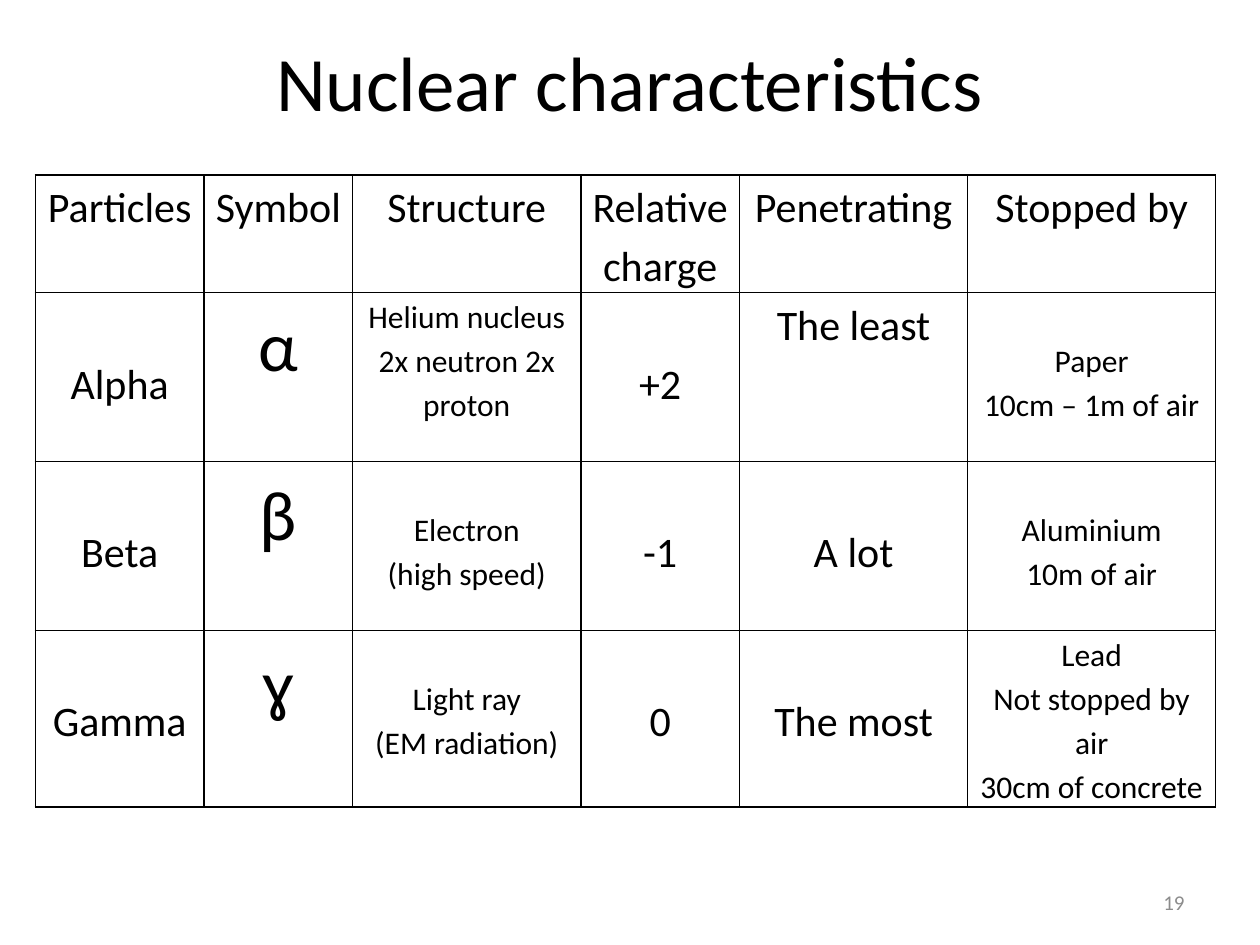
from dataclasses import dataclass

from lxml.etree import SubElement
from pptx import Presentation
from pptx.dml.color import RGBColor
from pptx.enum.text import MSO_ANCHOR as Anchor, PP_ALIGN as Align
from pptx.oxml.ns import qn
from pptx.slide import Slide
from pptx.table import _Cell as Cell
from pptx.text.text import TextFrame
from pptx.util import Inches, Pt

BLACK = RGBColor(0x00, 0x00, 0x00)
GRAY = RGBColor(0x8C, 0x8C, 0x8C)
FONT = "Calibri"
SLIDE_WIDTH, SLIDE_HEIGHT = Inches(10), Inches(7.5)
LINE_SPACING = 1.15
FONT_LINE_HEIGHT = 1.22
COLUMN_WIDTHS = (1.34, 1.18, 1.81, 1.26, 1.81, 1.97)
ROW_HEIGHTS = (0.93, 1.34, 1.34, 1.4)
SIDE_INSET = Inches(0.07)
LARGE, MEDIUM, SMALL = 40, 24, 18


@dataclass(frozen=True)
class Area:
    left: float
    top: float
    width: float
    height: float

    def lengths(self) -> tuple[int, int, int, int]:
        return (
            int(self.left * SLIDE_WIDTH),
            int(self.top * SLIDE_HEIGHT),
            int(self.width * SLIDE_WIDTH),
            int(self.height * SLIDE_HEIGHT),
        )


@dataclass(frozen=True)
class Label:
    text: str
    area: Area
    size: int
    color: RGBColor
    align: Align


@dataclass(frozen=True)
class Entry:
    text: str
    size: int = MEDIUM
    lines_above: int = 0


@dataclass(frozen=True)
class Particle:
    name: str
    symbol: str
    structure: Entry
    charge: str
    penetrating: Entry
    stopped_by: Entry

    def entries(self) -> tuple[Entry, ...]:
        return (
            Entry(self.name, lines_above=1),
            Entry(self.symbol, LARGE),
            self.structure,
            Entry(self.charge, lines_above=1),
            self.penetrating,
            self.stopped_by,
        )


LABELS = (
    Label("Nuclear characteristics", Area(0.05, 0, 0.9, 0.17), 44, BLACK, Align.CENTER),
    Label("19", Area(0.72, 0.93, 0.23, 0.05), 12, GRAY, Align.RIGHT),
)
TABLE_AREA = Area(0.028, 0.185, 0.94, 0.67)
HEADINGS = ("Particles", "Symbol", "Structure", "Relative charge", "Penetrating", "Stopped by")
PARTICLES = (
    Particle("Alpha", "α", Entry("Helium nucleus\n2x neutron 2x proton", SMALL), "+2",
             Entry("The least"), Entry("Paper\n10cm – 1m of air", SMALL, 1)),
    Particle("Beta", "β", Entry("Electron\n(high speed)", SMALL, 1), "-1",
             Entry("A lot", lines_above=1), Entry("Aluminium\n10m of air", SMALL, 1)),
    Particle("Gamma", "ɣ", Entry("Light ray\n(EM radiation)", SMALL, 1), "0",
             Entry("The most", lines_above=1),
             Entry("Lead\nNot stopped by air\n30cm of concrete", SMALL)),
)


def write_text(text_frame: TextFrame, text: str, size: int, color: RGBColor, align: Align) -> None:
    text_frame.text = text
    text_frame.word_wrap = True
    for paragraph in text_frame.paragraphs:
        paragraph.alignment = align
        for run in paragraph.runs:
            run.font.name = FONT
            run.font.size = Pt(size)
            run.font.color.rgb = color


def draw_label(slide: Slide, label: Label) -> None:
    shape = slide.shapes.add_textbox(*label.area.lengths())
    shape.text_frame.vertical_anchor = Anchor.MIDDLE
    write_text(shape.text_frame, label.text, label.size, label.color, label.align)


def draw_borders(cell: Cell) -> None:
    properties = cell._tc.get_or_add_tcPr()
    for position, side in enumerate(("a:lnL", "a:lnR", "a:lnT", "a:lnB")):
        line = properties.makeelement(qn(side), {"w": str(Pt(1))})
        properties.insert(position, line)
        fill = SubElement(line, qn("a:solidFill"))
        SubElement(fill, qn("a:srgbClr"), val=str(BLACK))


def fill_cell(cell: Cell, entry: Entry) -> None:
    cell.fill.background()
    cell.margin_left = cell.margin_right = SIDE_INSET
    line_height = entry.size * FONT_LINE_HEIGHT * LINE_SPACING
    cell.margin_top = Pt(entry.lines_above * line_height)
    cell.margin_bottom = 0
    cell.vertical_anchor = Anchor.TOP
    write_text(cell.text_frame, entry.text, entry.size, BLACK, Align.CENTER)
    for paragraph in cell.text_frame.paragraphs:
        paragraph.line_spacing = LINE_SPACING
    draw_borders(cell)


def draw_table(slide: Slide) -> None:
    rows = [tuple(Entry(heading) for heading in HEADINGS)]
    rows += [particle.entries() for particle in PARTICLES]
    shape = slide.shapes.add_table(len(rows), len(HEADINGS), *TABLE_AREA.lengths())
    table = shape.table
    table.first_row = table.horz_banding = False
    for column, width in zip(table.columns, COLUMN_WIDTHS):
        column.width = Inches(width)
    for row, height, entries in zip(table.rows, ROW_HEIGHTS, rows):
        row.height = Inches(height)
        for cell, entry in zip(row.cells, entries):
            fill_cell(cell, entry)


def main() -> None:
    presentation = Presentation()
    presentation.slide_width = SLIDE_WIDTH
    presentation.slide_height = SLIDE_HEIGHT
    slide = presentation.slides.add_slide(presentation.slide_layouts[6])
    draw_table(slide)
    for label in LABELS:
        draw_label(slide, label)
    presentation.save("out.pptx")


if __name__ == "__main__":
    main()
